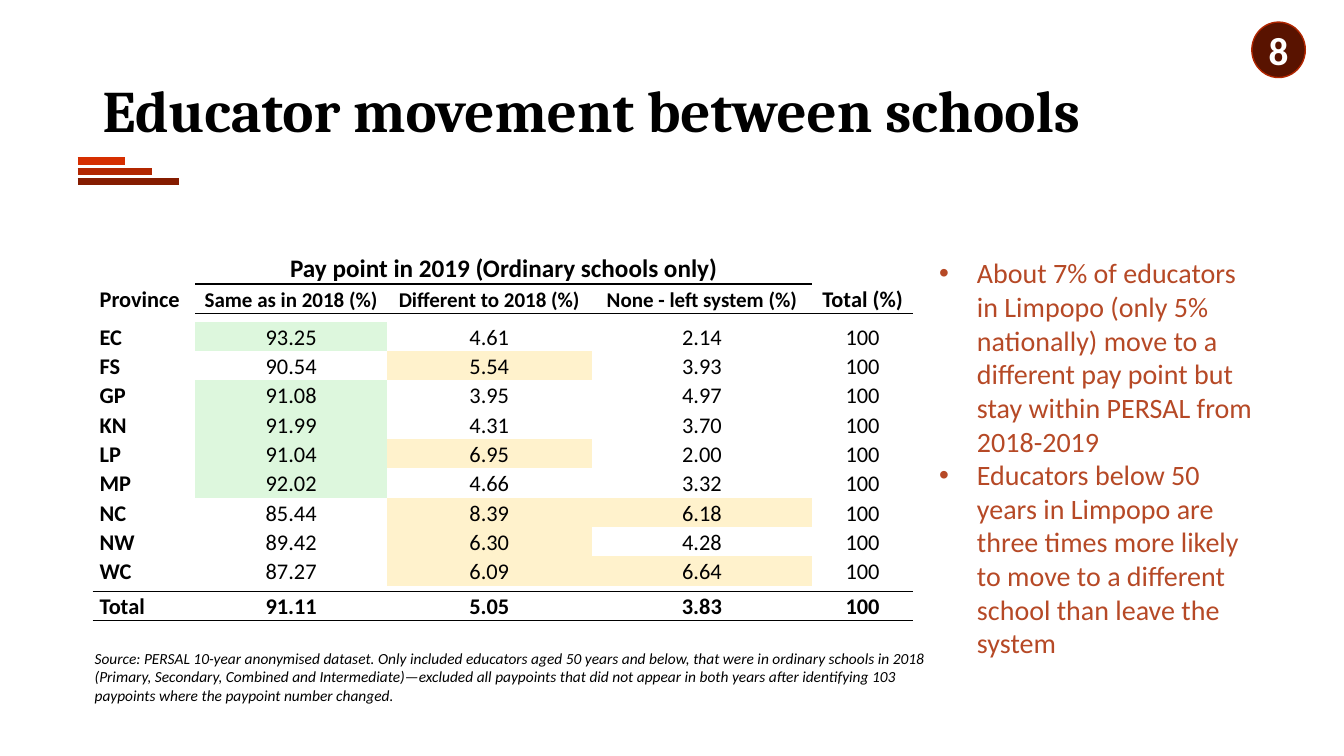
from dataclasses import dataclass

from lxml import etree
from pptx import Presentation
from pptx import util as u
from pptx.dml.color import RGBColor
from pptx.enum import shapes, text
from pptx.oxml import ns

Pt = u.Pt
COLORS = {
    "black": "000000", "white": "FFFFFF", "rust": "B64926",
    "bar_dark": "851C00", "bar_mid": "B22600", "bar_light": "D62E00",
    "badge": "591300", "green": "DDF7DD", "yellow": "FFF2CC",
}
ALIGN = text.PP_ALIGN
MIDDLE = text.MSO_ANCHOR.MIDDLE


@dataclass(frozen=True)
class Style:
    size: float
    color: str = "black"
    font: str = "Calibri"
    bold: bool = False
    italic: bool = False


@dataclass(frozen=True)
class Frame:
    left: float
    top: float
    width: float
    height: float

    def lengths(self):
        return [Pt(v) for v in (self.left, self.top, self.width, self.height)]


@dataclass(frozen=True)
class Bar:
    top: float
    length: float
    color: str


@dataclass(frozen=True)
class Province:
    """A row of percentages, with the fill colour of each highlighted column."""
    name: str
    values: tuple[str, str, str]
    fills: dict[int, str]


BARS = [Bar(129.6, 72.5, "bar_dark"), Bar(122.4, 53, "bar_mid"), Bar(115.2, 34, "bar_light")]
PROVINCES = [
    Province("EC", ("93.25", "4.61", "2.14"), {1: "green"}),
    Province("FS", ("90.54", "5.54", "3.93"), {2: "yellow"}),
    Province("GP", ("91.08", "3.95", "4.97"), {1: "green"}),
    Province("KN", ("91.99", "4.31", "3.70"), {1: "green"}),
    Province("LP", ("91.04", "6.95", "2.00"), {1: "green", 2: "yellow"}),
    Province("MP", ("92.02", "4.66", "3.32"), {1: "green"}),
    Province("NC", ("85.44", "8.39", "6.18"), {2: "yellow", 3: "yellow"}),
    Province("NW", ("89.42", "6.30", "4.28"), {2: "yellow"}),
    Province("WC", ("87.27", "6.09", "6.64"), {2: "yellow", 3: "yellow"}),
]
HEADINGS = ("Province", "Same as in 2018 (%)", "Different to 2018 (%)",
            "None - left system (%)", "Total (%)")
TOTALS = ("Total", "91.11", "5.05", "3.83", "100")
FINDINGS = [
    "About 7% of educators in Limpopo (only 5% nationally) move to a different pay point "
    "but stay within PERSAL from 2018-2019",
    "Educators below 50 years in Limpopo are three times more likely to move to a different "
    "school than leave the system",
]
SOURCE = (
    "Source: PERSAL 10-year anonymised dataset. Only included educators aged 50 years and below, "
    "that were in ordinary schools in 2018 (Primary, Secondary, Combined and Intermediate)—excluded "
    "all paypoints that did not appear in both years after identifying 103 paypoints where the "
    "paypoint number changed."
)
COLUMN_WIDTHS = (73.4, 136.8, 146.2, 157.6, 72)
FIRST_PROVINCE_ROW = 3
SPACER_ROWS = (2, 12)
TOTAL_ROW = 13
ROW_HEIGHTS = [23.6, 21, 6, *[20.95] * len(PROVINCES), 4, 21]
RULED_COLUMNS = {0: (1, 2, 3), 1: (1, 2, 3, 4), 12: range(5), 13: range(5)}


def rgb(name: str) -> RGBColor:
    return RGBColor.from_string(COLORS[name])


def write(paragraph, words: str, style: Style, align=ALIGN.LEFT) -> None:
    paragraph.alignment = align
    span = paragraph.add_run()
    span.text = words
    span.font.size = Pt(style.size)
    span.font.name = style.font
    span.font.bold = style.bold
    span.font.italic = style.italic
    span.font.color.rgb = rgb(style.color)


def add_text(page, frame: Frame, paragraphs: list[str], style: Style, anchor=text.MSO_ANCHOR.TOP):
    box = page.shapes.add_textbox(*frame.lengths())
    box.text_frame.word_wrap = True
    box.text_frame.vertical_anchor = anchor
    for index, words in enumerate(paragraphs):
        target = box.text_frame.paragraphs[0] if index == 0 else box.text_frame.add_paragraph()
        write(target, words, style)
    return box


def add_bullet(paragraph, color: str, indent: float) -> None:
    props = paragraph._p.get_or_add_pPr()
    props.set("marL", str(Pt(indent)))
    props.set("indent", str(-Pt(indent)))
    bullet_color = etree.SubElement(props, ns.qn("a:buClr"))
    etree.SubElement(bullet_color, ns.qn("a:srgbClr"), val=COLORS[color])
    etree.SubElement(props, ns.qn("a:buFont"), typeface="Arial")
    etree.SubElement(props, ns.qn("a:buChar"), char="•")


def add_bar(page, bar: Bar) -> None:
    left = 55.4
    line = page.shapes.add_connector(shapes.MSO_CONNECTOR.STRAIGHT, Pt(left), Pt(bar.top),
                                     Pt(left + bar.length), Pt(bar.top))
    line.line.color.rgb = rgb(bar.color)
    line.line.width = Pt(5.5)
    etree.SubElement(line._element.spPr, ns.qn("a:effectLst"))


def set_borders(cell, above: bool, below: bool) -> None:
    props = cell._tc.get_or_add_tcPr()
    sides = {"a:lnL": False, "a:lnR": False, "a:lnT": above, "a:lnB": below}
    for index, (tag, ruled) in enumerate(sides.items()):
        border = etree.Element(ns.qn(tag), w=str(Pt(1) if ruled else 0))
        if ruled:
            fill = etree.SubElement(border, ns.qn("a:solidFill"))
            etree.SubElement(fill, ns.qn("a:srgbClr"), val=COLORS["black"])
        else:
            etree.SubElement(border, ns.qn("a:noFill"))
        props.insert(index, border)


def write_cell(cell, words: str, style: Style, align) -> None:
    paragraph = cell.text_frame.paragraphs[0]
    paragraph.line_spacing = 1.07
    write(paragraph, words, style, align)


def add_pay_point_table(page) -> None:
    frame = Frame(66.2, 179.3, sum(COLUMN_WIDTHS), sum(ROW_HEIGHTS))
    table = page.shapes.add_table(len(ROW_HEIGHTS), len(COLUMN_WIDTHS), *frame.lengths()).table
    table.first_row = table.horz_banding = False
    for column, width in zip(table.columns, COLUMN_WIDTHS):
        column.width = Pt(width)
    for r, height in enumerate(ROW_HEIGHTS):
        table.rows[r].height = Pt(height)
        for c in range(len(COLUMN_WIDTHS)):
            cell = table.cell(r, c)
            cell.margin_left = cell.margin_right = Pt(5)
            cell.margin_top = cell.margin_bottom = 0
            cell.vertical_anchor = text.MSO_ANCHOR.BOTTOM
            cell.fill.background()
            set_borders(cell, c in RULED_COLUMNS.get(r - 1, ()), c in RULED_COLUMNS.get(r, ()))
            if r in SPACER_ROWS:
                paragraph = cell.text_frame.paragraphs[0]._p
                etree.SubElement(paragraph, ns.qn("a:endParaRPr"), sz="200")

    table.cell(0, 1).merge(table.cell(0, 3))
    write_cell(table.cell(0, 1), "Pay point in 2019 (Ordinary schools only)",
               Style(18, bold=True), ALIGN.CENTER)
    for c, heading in enumerate(HEADINGS):
        size = 15 if c in (1, 2, 3) else 16
        write_cell(table.cell(1, c), heading, Style(size, bold=True),
                   ALIGN.CENTER if c else ALIGN.LEFT)
    for r, province in enumerate(PROVINCES, FIRST_PROVINCE_ROW):
        for c, words in enumerate((province.name, *province.values, "100")):
            write_cell(table.cell(r, c), words, Style(16, bold=c == 0),
                       ALIGN.CENTER if c else ALIGN.JUSTIFY)
        for c, color in province.fills.items():
            table.cell(r, c).fill.solid()
            table.cell(r, c).fill.fore_color.rgb = rgb(color)
    for c, words in enumerate(TOTALS):
        write_cell(table.cell(TOTAL_ROW, c), words, Style(16, bold=True),
                   ALIGN.CENTER if c else ALIGN.JUSTIFY)


def add_page_badge(page) -> None:
    badge = page.shapes.add_shape(shapes.MSO_SHAPE.OVAL, *Frame(894.2, 15.8, 38.2, 39.6).lengths())
    badge.shadow.inherit = False
    badge.fill.solid()
    badge.fill.fore_color.rgb = rgb("badge")
    badge.line.color.rgb = rgb("bar_mid")
    badge.line.width = Pt(1)
    badge.text_frame.vertical_anchor = MIDDLE
    badge.text_frame.word_wrap = False
    write(badge.text_frame.paragraphs[0], "8", Style(28, "white", bold=True), ALIGN.CENTER)


def main() -> None:
    deck = Presentation()
    deck.slide_width, deck.slide_height = Pt(960), Pt(540)
    page = deck.slides.add_slide(deck.slide_layouts[6])
    for bar in BARS:
        add_bar(page, bar)
    title = add_text(page, Frame(66.2, 28.8, 828, 104.4), ["Educator movement between schools"],
                     Style(42, font="Cambria", bold=True), MIDDLE)
    title.text_frame.paragraphs[0].line_spacing = 0.9
    findings = add_text(page, Frame(663.8, 179.3, 244, 278), FINDINGS, Style(20, "rust"))
    for paragraph in findings.text_frame.paragraphs:
        add_bullet(paragraph, "rust", 27)
    add_text(page, Frame(60.5, 460, 618.5, 53.3), [SOURCE], Style(11, italic=True))
    add_pay_point_table(page)
    add_page_badge(page)
    deck.save("out.pptx")


if __name__ == "__main__":
    main()
